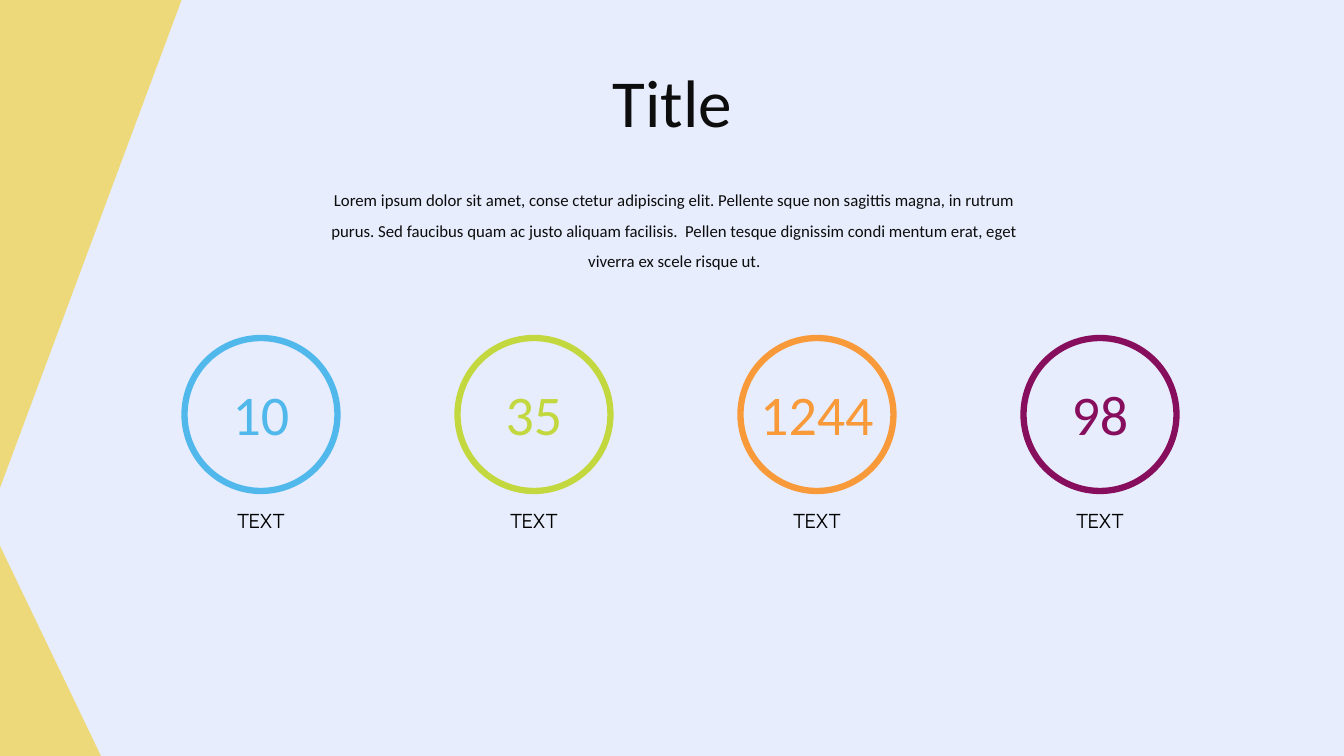
"""Build a title slide with four ringed figures."""
from pptx import Presentation
from pptx.dml.color import RGBColor
from pptx.enum.shapes import MSO_SHAPE
from pptx.enum.text import MSO_AUTO_SIZE, PP_ALIGN
from pptx.util import Emu, Pt

SCALE = 914400 / 100.8
PALE = RGBColor(0xE7, 0xED, 0xFD)
SAND = RGBColor(0xED, 0xD9, 0x7A)
INK = RGBColor(0x0D, 0x0D, 0x0D)
BLACK = RGBColor(0x00, 0x00, 0x00)
BLUE = RGBColor(0x51, 0xB8, 0xEB)
LIME = RGBColor(0xC3, 0xD8, 0x3F)
AMBER = RGBColor(0xF8, 0x9A, 0x3A)
PLUM = RGBColor(0x87, 0x0E, 0x5D)
RING = 153


def px(*sizes):
    return [Emu(round(size * SCALE)) for size in sizes]


def write(text, box, size, color, face="Calibri", space=None):
    frame = slide.shapes.add_textbox(*px(*box)).text_frame
    frame.word_wrap = True
    frame.auto_size = MSO_AUTO_SIZE.SHAPE_TO_FIT_TEXT
    para = frame.paragraphs[0]
    para.alignment = PP_ALIGN.CENTER
    para.line_spacing = space
    run = para.add_run()
    run.text = text
    for name, value in {"size": Pt(size), "name": face}.items():
        setattr(run.font, name, value)
    run.font.color.rgb = color


deck = Presentation()
deck.slide_width, deck.slide_height = px(1344, 756)
slide = deck.slides.add_slide(deck.slide_layouts[6])
slide.background.fill.solid()
slide.background.fill.fore_color.rgb = PALE

for box, turn in [((0, 546, 101, 210), 0), ((0, -1, 182, 489), 180)]:
    wedge = slide.shapes.add_shape(MSO_SHAPE.RIGHT_TRIANGLE, *px(*box))
    wedge.shadow.inherit = False
    wedge.fill.solid()
    wedge.fill.fore_color.rgb = SAND
    wedge.line.fill.background()
    if turn:
        wedge.rotation = turn
        wedge._element.spPr.xfrm.set("flipH", "1")

write("Title", (364, 55, 617, 92), 48, INK)
write(
    "Lorem ipsum dolor sit amet, conse ctetur adipiscing elit. "
    "Pellente sque non sagittis magna, in rutrum purus. "
    "Sed faucibus quam ac justo aliquam facilisis.  "
    "Pellen tesque dignissim condi mentum erat, eget "
    "viverra ex scele risque ut.",
    (319, 175, 711, 102), 12, INK, space=1.5)

stats = [
    ("10", 261, 120, BLUE),
    ("35", 534, 120, LIME),
    ("1244", 817, 142, AMBER),
    ("98", 1100, 120, PLUM),
]
for count, mid, wide, color in stats:
    ring = slide.shapes.add_shape(
        MSO_SHAPE.OVAL, *px(mid - RING / 2, 338, RING, RING))
    ring.shadow.inherit = False
    ring.fill.background()
    ring.line.color.rgb = color
    ring.line.width = Pt(4.5)
    write(count, (mid - wide / 2, 375, wide, 78), 40, color)
    write("TEXT", (mid - 60, 504, 120, 34), 14, BLACK, "Manrope")

deck.save("out.pptx")
